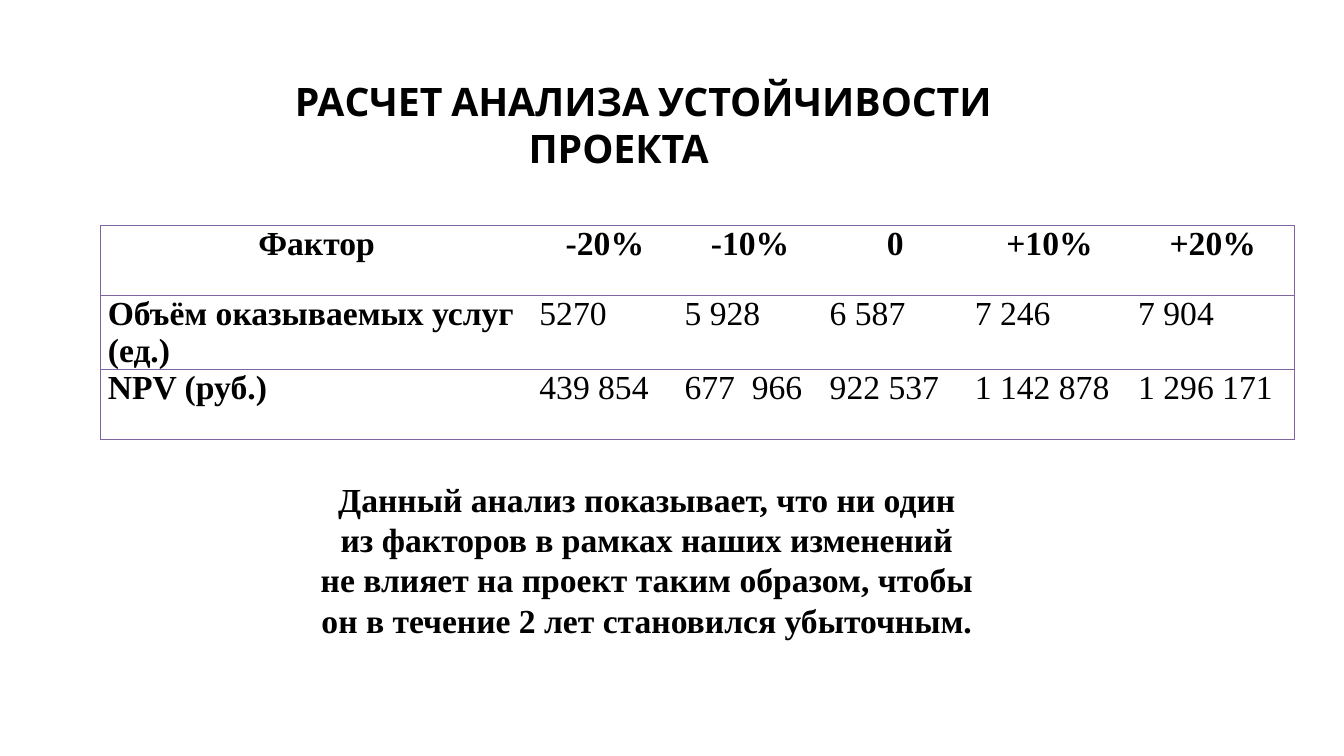
import dataclasses

import pptx
import pptx.dml.color
import pptx.enum.text
import pptx.oxml
import pptx.oxml.ns
import pptx.table
import pptx.text.text
import pptx.util
from pptx.util import Inches

BLACK = "000000"
PURPLE = "8064A2"
SERIF = "Times New Roman"
CENTER = pptx.enum.text.PP_ALIGN.CENTER
LEFT = pptx.enum.text.PP_ALIGN.LEFT
NO_STYLE = "{2D5ABB26-0587-4C30-8999-92F81FD0307C}"


@dataclasses.dataclass
class FactorRow:
    label: str
    values: list[str]
    is_header: bool = False


ROWS = [
    FactorRow("Фактор", ["-20%", "-10%", "0", "+10%", "+20%"], is_header=True),
    FactorRow("Объём оказываемых услуг (ед.)",
              ["5270", "5 928", "6 587", "7 246", "7 904"]),
    FactorRow("NPV (руб.)",
              ["439 854", "677  966", "922 537", "1 142 878", "1 296 171"]),
]
COLUMN_WIDTHS = [4.28, 1.44, 1.44, 1.44, 1.62, 1.62]
ROW_HEIGHT = 0.69


def color(hex_value: str) -> pptx.dml.color.RGBColor:
    return pptx.dml.color.RGBColor.from_string(hex_value)


def format_text(frame: pptx.text.text.TextFrame, size: float, font: str,
                bold: bool, align: pptx.enum.text.PP_ALIGN) -> None:
    for paragraph in frame.paragraphs:
        paragraph.alignment = align
        for run in paragraph.runs:
            run.font.size = pptx.util.Pt(size)
            run.font.name = font
            run.font.bold = bold
            run.font.color.rgb = color(BLACK)


def set_borders(cell: pptx.table._Cell, sides: str) -> None:
    """Draw a purple line on each side named in sides (L, R, T, B)."""
    properties = cell._tc.get_or_add_tcPr()
    for position, side in enumerate(sides):
        line = pptx.oxml.parse_xml(
            f'<a:ln{side} {pptx.oxml.ns.nsdecls("a")} w="12700"><a:solidFill>'
            f'<a:srgbClr val="{PURPLE}"/></a:solidFill></a:ln{side}>')
        properties.insert(position, line)


def add_title(slide) -> None:
    title = slide.shapes.title
    title.left, title.top = Inches(1.4), Inches(0.95)
    title.width, title.height = Inches(9.47), Inches(0.57)
    frame = title.text_frame
    frame.text = "РАСЧЕТ АНАЛИЗА УСТОЙЧИВОСТИ ПРОЕКТА"
    frame.word_wrap = True
    frame.auto_size = pptx.enum.text.MSO_AUTO_SIZE.NONE
    frame.vertical_anchor = pptx.enum.text.MSO_ANCHOR.MIDDLE
    frame.paragraphs[0]._p.get_or_add_pPr().set("indent", str(Inches(0.49)))
    format_text(frame, 28, "Cabin", True, CENTER)


def add_factor_table(slide) -> None:
    table = slide.shapes.add_table(
        len(ROWS), len(COLUMN_WIDTHS), Inches(1), Inches(2.24),
        Inches(sum(COLUMN_WIDTHS)), Inches(ROW_HEIGHT * len(ROWS))).table
    table.first_row = table.horz_banding = False
    table._tbl.tblPr.find(pptx.oxml.ns.qn("a:tableStyleId")).text = NO_STYLE
    for column, width in zip(table.columns, COLUMN_WIDTHS):
        column.width = Inches(width)
    last = len(COLUMN_WIDTHS) - 1
    for row, factor in zip(table.rows, ROWS):
        row.height = Inches(ROW_HEIGHT)
        for index, text in enumerate([factor.label, *factor.values]):
            cell = row.cells[index]
            cell.text_frame.text = text
            cell.margin_left = cell.margin_right = Inches(0.07)
            cell.margin_top = cell.margin_bottom = 0
            cell.fill.background()
            set_borders(cell, {0: "LTB", last: "RTB"}.get(index, "TB"))
            format_text(cell.text_frame, 24, SERIF,
                        factor.is_header or index == 0,
                        CENTER if factor.is_header else LEFT)


def add_conclusion(slide) -> None:
    conclusion = slide.shapes.add_textbox(
        Inches(3.08), Inches(4.7), Inches(6.67), Inches(2.12))
    frame = conclusion.text_frame
    frame.word_wrap = True
    frame.text = ("Данный анализ показывает, что ни один из факторов в рамках "
                  "наших изменений не влияет на проект таким образом, чтобы он "
                  "в течение 2 лет становился убыточным.")
    format_text(frame, 24, SERIF, True, CENTER)


def main() -> None:
    presentation = pptx.Presentation()
    presentation.slide_width = Inches(13.33)
    presentation.slide_height = Inches(7.5)
    slide = presentation.slides.add_slide(presentation.slide_layouts[5])
    add_title(slide)
    add_factor_table(slide)
    add_conclusion(slide)
    presentation.save("out.pptx")


if __name__ == "__main__":
    main()
